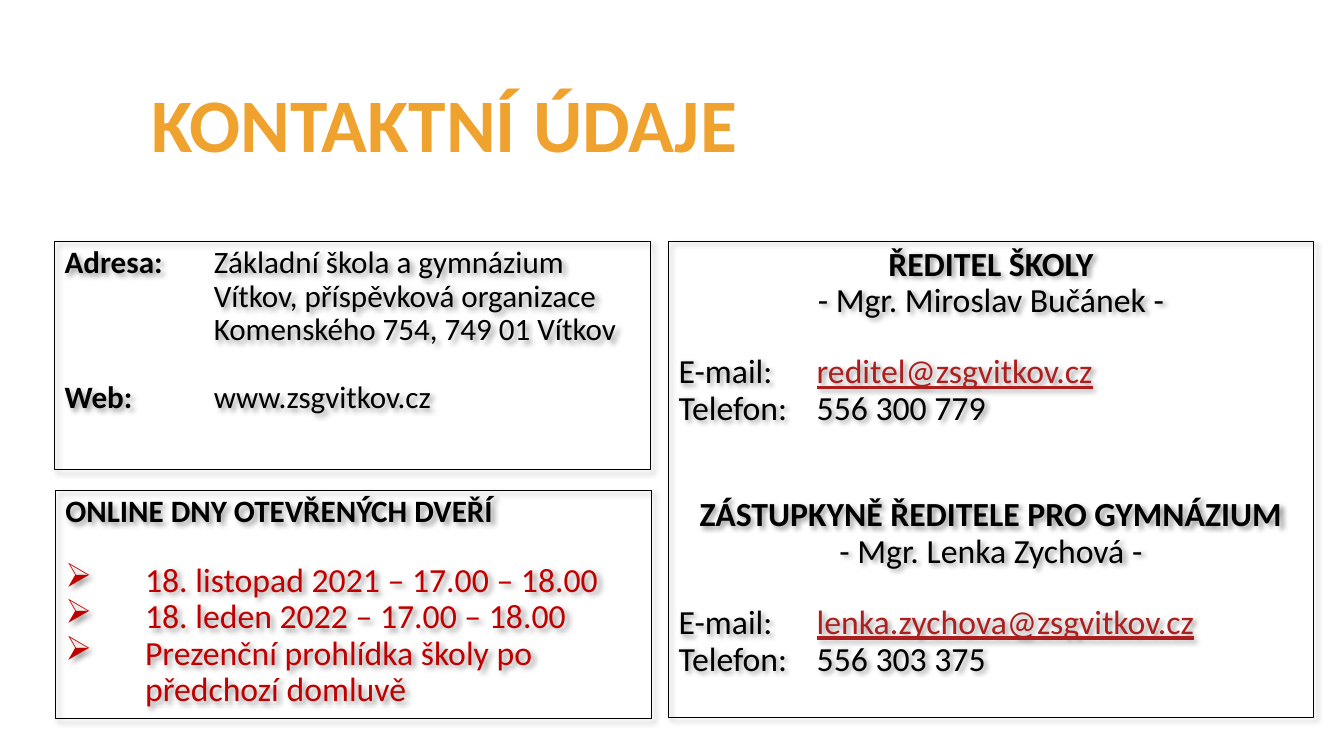
from lxml import etree
from pptx import Presentation
from pptx.dml.color import RGBColor
from pptx.enum.text import MSO_ANCHOR, MSO_AUTO_SIZE, PP_ALIGN
from pptx.oxml.ns import qn
from pptx.util import Inches, Pt

COLOURS = {"title": "F0A22E", "text": "000000", "mail": "AD1F1F", "dates": "C00000"}
FONT = "Calibri"
SMALL, LARGE = 22.2, 24.1
ADDRESS_INDENT, CONTACT_INDENT, DATE_INDENT = 1.48, 1.37, 0.79


def place(shape, box):
    """Move a shape to (left, top, width, height) in inches."""
    for name, value in zip(("left", "top", "width", "height"), box):
        setattr(shape, name, Inches(value))


def add_run(paragraph, text, size, colour="text", **formats):
    run = paragraph.add_run()
    run.text = text
    run.font.color.rgb = RGBColor.from_string(COLOURS[colour])
    for name, value in {"name": FONT, "size": Pt(size), "bold": False, **formats}.items():
        setattr(run.font, name, value)


def add_paragraph(frame, runs, size, indent=0, gap=0, bullet=None, align=PP_ALIGN.LEFT):
    """Add a paragraph; runs are (text, formats) pairs, indent is a hanging one."""
    first = frame.paragraphs[0]
    paragraph = frame.add_paragraph() if first.runs else first
    properties = paragraph._p.get_or_add_pPr()
    properties.set("marL", str(Inches(indent)))
    properties.set("indent", str(-Inches(indent)))
    if bullet:
        etree.SubElement(properties, qn("a:buChar")).set("char", bullet)
    else:
        etree.SubElement(properties, qn("a:buNone"))
    settings = {"alignment": align, "line_spacing": 0.9,
                "space_before": Pt(gap), "space_after": Pt(0)}
    for name, value in settings.items():
        setattr(paragraph, name, value)
    for text, formats in runs:
        add_run(paragraph, text, size, **formats)


def frame_panel(shape, box):
    """Give a panel its place, outline and soft shadow; return its text frame."""
    place(shape, box)
    shape.fill.background()
    shape.line.color.rgb = RGBColor.from_string(COLOURS["text"])
    shape.line.width = Pt(0.75)
    shape.shadow.inherit = False
    effects = shape._element.spPr.find(qn("a:effectLst"))
    shadow = etree.SubElement(effects, qn("a:outerShdw"), blurRad=str(Pt(4)),
                              dist=str(Pt(3)), dir=str(45 * 60000),
                              algn="tl", rotWithShape="0")
    colour = etree.SubElement(shadow, qn("a:srgbClr"), val=COLOURS["text"])
    etree.SubElement(colour, qn("a:alpha"), val="40000")
    frame = shape.text_frame
    for name, value in {"word_wrap": True, "auto_size": MSO_AUTO_SIZE.NONE,
                        "vertical_anchor": MSO_ANCHOR.TOP}.items():
        setattr(frame, name, value)
    return frame


def build_title(shape, box):
    place(shape, box)
    frame = shape.text_frame
    frame.vertical_anchor = MSO_ANCHOR.MIDDLE
    paragraph = frame.paragraphs[0]
    paragraph.alignment = PP_ALIGN.LEFT
    paragraph.line_spacing = 0.95
    add_run(paragraph, "KONTAKTNÍ ÚDAJE", 54, "title", bold=True)


def build_address(shape, box):
    frame = frame_panel(shape, box)
    lines = [
        ("Adresa:", " \tZákladní škola a gymnázium Vítkov, příspěvková organizace", 0),
        ("", "\tKomenského 754, 749 01 Vítkov", 0),
        ("Web:", " \twww.zsgvitkov.cz", 24),
    ]
    for label, text, gap in lines:
        runs = [(label, {"bold": True})] if label else []
        add_paragraph(frame, runs + [(text, {})], SMALL, ADDRESS_INDENT, gap)


def build_contacts(shape, box):
    frame = frame_panel(shape, box)
    people = [
        ("ŘEDITEL ŠKOLY", "Mgr. Miroslav Bučánek", "reditel@zsgvitkov.cz", "556 300 779", 0),
        ("ZÁSTUPKYNĚ ŘEDITELE PRO GYMNÁZIUM", "Mgr. Lenka Zychová",
         "lenka.zychova@zsgvitkov.cz", "556 303 375", 50),
    ]
    for role, name, mail, phone, gap in people:
        add_paragraph(frame, [(role, {"bold": True})], LARGE, gap=gap, align=PP_ALIGN.CENTER)
        add_paragraph(frame, [(f"- {name} -", {})], LARGE, align=PP_ALIGN.CENTER)
        mail_runs = [("E-mail: \t", {}), (mail, {"colour": "mail", "underline": True})]
        add_paragraph(frame, mail_runs, LARGE, CONTACT_INDENT, gap=25)
        add_paragraph(frame, [(f"Telefon: \t{phone}", {})], LARGE, CONTACT_INDENT)


def build_open_days(shape, box):
    frame = frame_panel(shape, box)
    add_paragraph(frame, [("ONLINE DNY OTEVŘENÝCH DVEŘÍ", {"bold": True})], SMALL)
    dates = ["18. listopad 2021 – 17.00 – 18.00", "18. leden 2022 – 17.00 – 18.00",
             "Prezenční prohlídka školy po předchozí domluvě"]
    for index, date in enumerate(dates):
        add_paragraph(frame, [(date, {"colour": "dates"})], LARGE, DATE_INDENT,
                      gap=0 if index else 24, bullet="➢")


def main():
    presentation = Presentation()
    presentation.slide_width = Inches(13.33)
    presentation.slide_height = Inches(7.5)
    # Layout with a title and two content placeholders
    slide = presentation.slides.add_slide(presentation.slide_layouts[3])
    title, address, contacts = slide.placeholders
    build_title(title, (1.4, 0.51, 10.53, 1.49))
    build_address(address, (0.54, 2.4, 5.91, 2.26))
    build_contacts(contacts, (6.63, 2.4, 6.4, 4.72))
    open_days = slide.shapes.add_textbox(0, 0, 0, 0)
    build_open_days(open_days, (0.55, 4.87, 5.91, 2.26))
    presentation.save("out.pptx")


if __name__ == "__main__":
    main()
